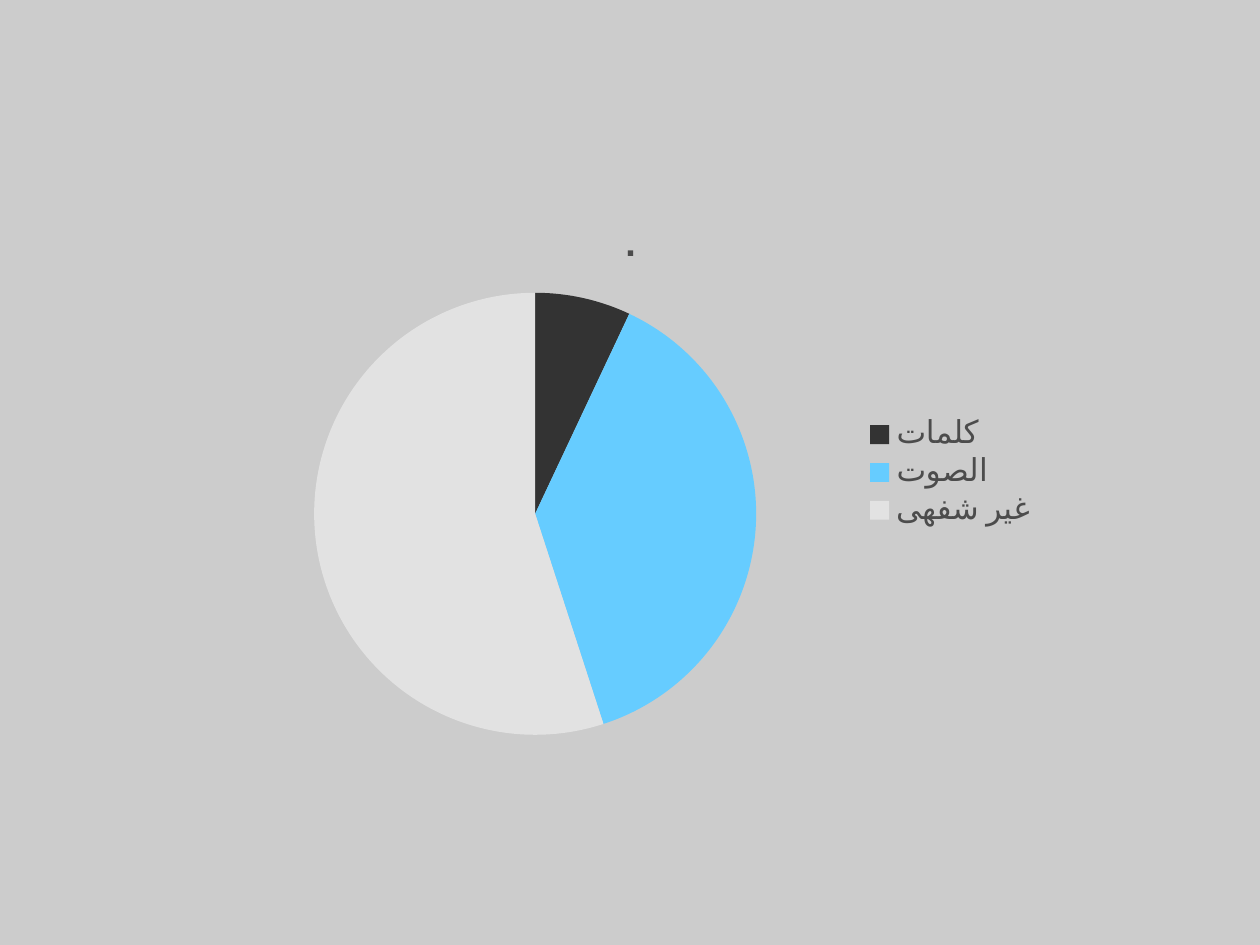
from pptx import Presentation
from pptx.chart import data
from pptx.dml.color import RGBColor
from pptx.enum import chart as kinds
from pptx.util import Inches, Pt

HUES = {"back": "CCCCCC", "text": "4C4C4C",
        "words": "333333", "voice": "66CCFF", "silent": "E2E2E2"}
SHARES = [("كلمات", 7, "words"), ("الصوت", 38, "voice"), ("غير شفهى", 55, "silent")]

deck = Presentation()
deck.slide_width, deck.slide_height = Inches(10), Inches(7.5)
slide = deck.slides.add_slide(deck.slide_layouts[6])
back = slide.background.fill
back.solid()
back.fore_color.rgb = RGBColor.from_string(HUES["back"])

table = data.CategoryChartData()
table.categories = [name for name, share, hue in SHARES]
table.add_series(".", [share for name, share, hue in SHARES])
pie = slide.shapes.add_chart(kinds.XL_CHART_TYPE.PIE, Inches(1.67), Inches(1.53),
                             Inches(6.67), Inches(4.44), table).chart
pie.font.name = "Arial"
pie.font.size = Pt(18)
pie.font.color.rgb = RGBColor.from_string(HUES["text"])

pie.has_title = True
title = pie.chart_title.text_frame.paragraphs[0]
title.text = "."
title.font.name = "Arial"
title.font.size = Pt(21.6)
title.font.bold = True
title.font.color.rgb = RGBColor.from_string(HUES["text"])

pie.has_legend = True
pie.legend.position = kinds.XL_LEGEND_POSITION.RIGHT
pie.legend.include_in_layout = False

plot = pie.plots[0]
plot.vary_by_categories = True
for spot, (name, share, hue) in enumerate(SHARES):
    slice_fill = plot.series[0].points[spot].format.fill
    slice_fill.solid()
    slice_fill.fore_color.rgb = RGBColor.from_string(HUES[hue])

deck.save("out.pptx")
